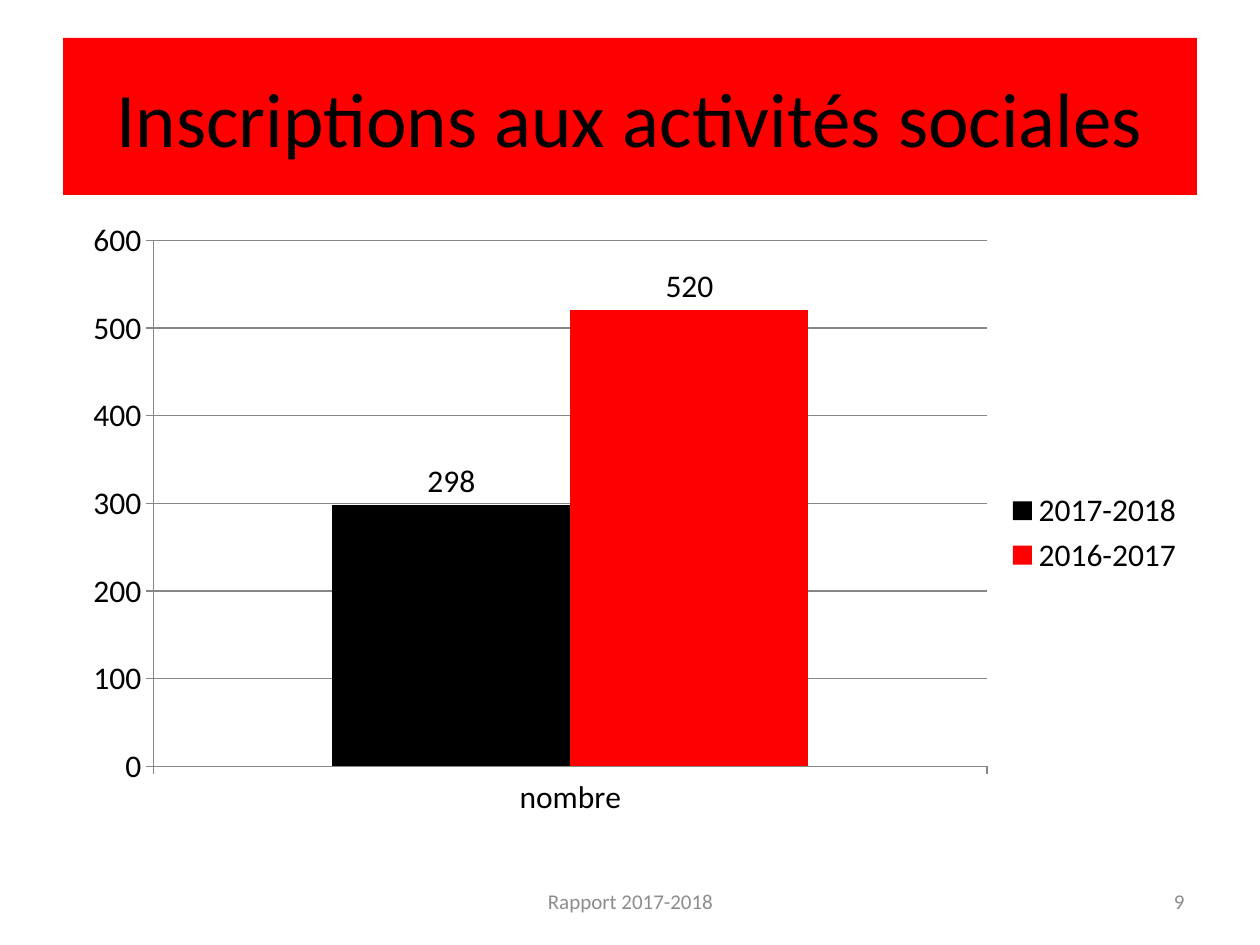
import pptx
import pptx.chart.data
import pptx.dml.color
import pptx.enum.chart
import pptx.enum.text
import pptx.oxml
import pptx.oxml.ns
import pptx.util

PX = 914400 / 126
FONT = "Calibri"
BLACK, RED, GREY, LINE = "000000", "FF0000", "8C8C8C", "878787"
SERIES = [("2017-2018", 298, BLACK), ("2016-2017", 520, RED)]
PLOT = {"x": 0.08, "y": 0.031, "w": 0.735, "h": 0.843}
ALIGN = pptx.enum.text.PP_ALIGN


def px(n):
    """Turn pixels into EMU."""
    return pptx.util.Emu(round(n * PX))


def color(fmt, value):
    """Give a fill or line a solid hex colour."""
    fill = fmt.fill if hasattr(fmt, "fill") else fmt
    fill.solid()
    fill.fore_color.rgb = pptx.dml.color.RGBColor.from_string(value)


def style(font, size, value):
    """Set the typeface, size and colour of a font."""
    font.name = FONT
    font.size = pptx.util.Pt(size)
    color(font, value)


def write(sp, text, size=12, value=GREY, align=ALIGN.CENTER):
    """Write one vertically centred paragraph in a shape."""
    tf = sp.text_frame
    tf.word_wrap = True
    tf.auto_size = pptx.enum.text.MSO_AUTO_SIZE.NONE
    tf.vertical_anchor = pptx.enum.text.MSO_ANCHOR.MIDDLE
    p = tf.paragraphs[0]
    p.alignment = align
    r = p.add_run()
    r.text = text
    style(r.font, size, value)


def add_title(s, text):
    """Place the title placeholder as a red band."""
    sp = s.shapes.title
    sp.left, sp.top, sp.width, sp.height = px(63), px(38), px(1134), px(157)
    color(sp, RED)
    write(sp, text, size=44, value=BLACK)


def add_text(s, x, w, text, **fmt):
    """Add a text box on the footer line."""
    write(s.shapes.add_textbox(px(x), px(876), px(w), px(50)), text, **fmt)


def set_plot_layout(chart):
    """Fix the inner plot area as fractions of the chart."""
    area = chart.plots[0]._element.getparent()
    for old in area.findall(pptx.oxml.ns.qn("c:layout")):
        area.remove(old)
    modes = '<c:layoutTarget val="inner"/><c:xMode val="edge"/><c:yMode val="edge"/>'
    sizes = "".join(f'<c:{k} val="{v}"/>' for k, v in PLOT.items())
    area.insert(0, pptx.oxml.parse_xml(
        f'<c:layout {pptx.oxml.ns.nsdecls("c")}><c:manualLayout>'
        f"{modes}{sizes}</c:manualLayout></c:layout>"))


def style_axes(chart):
    """Draw thin grey axes and horizontal gridlines."""
    val = chart.value_axis
    val.minimum_scale, val.maximum_scale, val.major_unit = 0, 600, 100
    val.has_major_gridlines = True
    for axis in (chart.category_axis, val):
        axis.major_tick_mark = pptx.enum.chart.XL_TICK_MARK.OUTSIDE
    for part in (chart.category_axis, val, val.major_gridlines):
        color(part.format.line, LINE)
        part.format.line.width = pptx.util.Pt(0.75)


def add_chart(s):
    """Add the column chart of registrations."""
    data = pptx.chart.data.CategoryChartData()
    data.categories = ["nombre"]
    for name, value, _ in SERIES:
        data.add_series(name, [value])
    chart = s.shapes.add_chart(
        pptx.enum.chart.XL_CHART_TYPE.COLUMN_CLUSTERED,
        px(63), px(221), px(1134), px(624), data).chart
    style(chart.font, 18, BLACK)
    chart.has_title = False
    chart.has_legend = True
    chart.legend.position = pptx.enum.chart.XL_LEGEND_POSITION.RIGHT
    chart.legend.include_in_layout = False
    plot = chart.plots[0]
    plot.vary_by_categories = False
    plot.gap_width, plot.overlap = 150, 0
    for series, (_, _, value) in zip(plot.series, SERIES):
        color(series.format, value)
        series.data_labels.show_value = True
        series.data_labels.position = pptx.enum.chart.XL_LABEL_POSITION.OUTSIDE_END
    style_axes(chart)
    set_plot_layout(chart)


def main():
    """Build and save the slide."""
    prs = pptx.Presentation()
    prs.slide_width, prs.slide_height = px(1260), px(945)
    s = prs.slides.add_slide(prs.slide_layouts.get_by_name("Title Only"))
    add_title(s, "Inscriptions aux activités sociales")
    add_chart(s)
    add_text(s, 431, 399, "Rapport 2017-2018")
    add_text(s, 903, 294, "9", align=ALIGN.RIGHT)
    prs.save("out.pptx")


if __name__ == "__main__":
    main()
